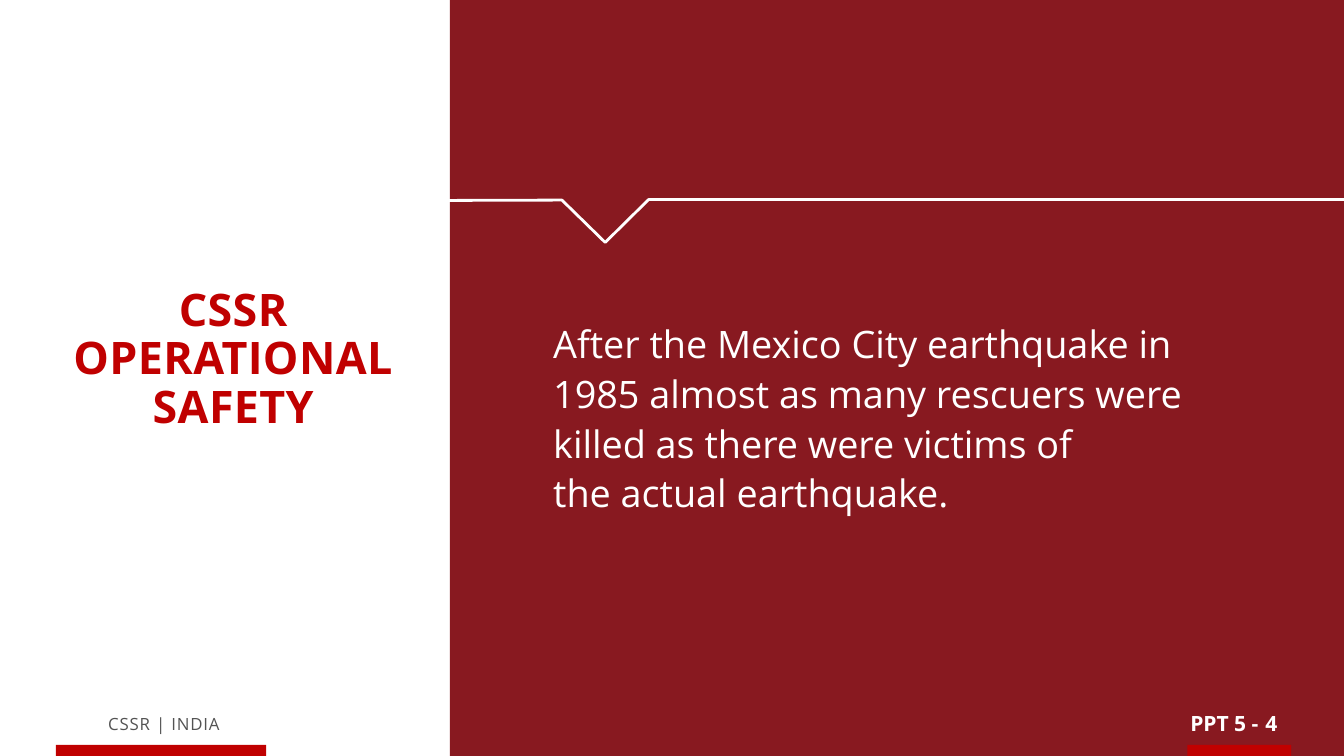
import dataclasses
import typing

import pptx
import pptx.dml.color
import pptx.enum.shapes
import pptx.enum.text
import pptx.util

RGB = pptx.dml.color.RGBColor
ALIGN = pptx.enum.text.PP_ALIGN


@dataclasses.dataclass(frozen=True)
class Theme:
    font: str = "Open Sans"
    panel: RGB = RGB(0x88, 0x19, 0x20)
    accent: RGB = RGB(0xC0, 0x00, 0x00)
    white: RGB = RGB(0xFF, 0xFF, 0xFF)
    muted: RGB = RGB(0x53, 0x53, 0x53)
    title_size: int = 64
    body_size: int = 54
    page_size: int = 30
    footer_size: int = 24
    rule_width: int = 4


class Area(typing.NamedTuple):
    """Shares of the slide, in percent."""
    left: float
    top: float
    width: float
    height: float


@dataclasses.dataclass(frozen=True)
class Style:
    size: int
    color: RGB
    bold: bool = False
    tracking: float = 0
    align: ALIGN = ALIGN.CENTER
    line_spacing: float = 1.0
    inset: float = 0.09
    wrap: bool = True


@dataclasses.dataclass(frozen=True)
class Label:
    area: Area
    paragraphs: tuple[str, ...]
    style: Style


THEME = Theme()
SLIDE_WIDTH = pptx.util.Inches(26.67)
SLIDE_HEIGHT = pptx.util.Inches(15)

BAR_TOP, BAR_HEIGHT = 98.53, 1.47
PAGE_TOP, PAGE_HEIGHT = 93.4, 4.93
MARGIN = 4.16

BLOCKS = (
    (Area(33.48, 0, 66.52, 100), THEME.panel),
    (Area(MARGIN, BAR_TOP, 15.64, BAR_HEIGHT), THEME.accent),
    (Area(88.34, BAR_TOP, 7.72, BAR_HEIGHT), THEME.accent),
)

PAGE_STYLE = Style(THEME.page_size, THEME.white, bold=True, wrap=False)

HEADING = Label(
    Area(MARGIN, 37.47, 26.4, 20.53),
    ("CSSR OPERATIONAL SAFETY",),
    Style(THEME.title_size, THEME.accent, bold=True, tracking=0.6, line_spacing=0.9),
)

LABELS = (
    Label(Area(2.67, 93.87, 19.05, 3.87), ("CSSR | INDIA",),
          Style(THEME.footer_size, THEME.muted, tracking=1.2)),
    Label(Area(87.8, PAGE_TOP, 6.6, PAGE_HEIGHT), ("PPT 5 -",), PAGE_STYLE),
    Label(Area(93.81, PAGE_TOP, 1.57, PAGE_HEIGHT), ("4",), PAGE_STYLE),
    Label(
        Area(40.94, 41.4, 52.34, 30.2),
        ("After the Mexico City earthquake in 1985 almost as many rescuers were "
         "killed as there were victims of",
         "the actual earthquake."),
        Style(THEME.body_size, THEME.white, align=ALIGN.LEFT, line_spacing=1.1, inset=0.06),
    ),
)

NOTCHED_RULE = ((30.93, 26.53), (41.81, 26.47), (45.03, 32.07), (48.26, 26.4), (100, 26.4))


def across(share: float) -> int:
    return round(SLIDE_WIDTH * share / 100)


def down(share: float) -> int:
    return round(SLIDE_HEIGHT * share / 100)


def place(area: Area) -> tuple[int, int, int, int]:
    return across(area.left), down(area.top), across(area.width), down(area.height)


def draw_block(slide: pptx.slide.Slide, area: Area, color: RGB) -> None:
    block = slide.shapes.add_shape(pptx.enum.shapes.MSO_SHAPE.RECTANGLE, *place(area))
    block.shadow.inherit = False
    block.fill.solid()
    block.fill.fore_color.rgb = color
    block.line.fill.background()


def write(frame: pptx.text.text.TextFrame, label: Label) -> None:
    style = label.style
    frame.word_wrap = style.wrap
    frame.auto_size = pptx.enum.text.MSO_AUTO_SIZE.SHAPE_TO_FIT_TEXT
    frame.vertical_anchor = pptx.enum.text.MSO_ANCHOR.TOP
    inset = pptx.util.Inches(style.inset)
    frame.margin_left = frame.margin_right = inset
    frame.margin_top = frame.margin_bottom = inset
    for index, wording in enumerate(label.paragraphs):
        paragraph = frame.add_paragraph() if index else frame.paragraphs[0]
        paragraph.alignment = style.align
        paragraph.line_spacing = style.line_spacing
        paragraph.space_before = pptx.util.Pt(0)
        run = paragraph.add_run()
        run.text = wording
        run.font.name = THEME.font
        run.font.size = pptx.util.Pt(style.size)
        run.font.bold = style.bold
        run.font.color.rgb = style.color
        if style.tracking:
            run.font._element.set("spc", str(round(style.tracking * 100)))


def draw_heading(slide: pptx.slide.Slide, label: Label) -> None:
    heading = slide.shapes.title
    heading.left, heading.top, heading.width, heading.height = place(label.area)
    write(heading.text_frame, label)


def draw_label(slide: pptx.slide.Slide, label: Label) -> None:
    write(slide.shapes.add_textbox(*place(label.area)).text_frame, label)


def draw_rule(slide: pptx.slide.Slide, corners: tuple[tuple[float, float], ...]) -> None:
    start, *rest = [(across(x), down(y)) for x, y in corners]
    builder = slide.shapes.build_freeform(*start)
    builder.add_line_segments(rest, close=False)
    rule = builder.convert_to_shape()
    rule.shadow.inherit = False
    rule.fill.background()
    rule.line.color.rgb = THEME.white
    rule.line.width = pptx.util.Pt(THEME.rule_width)


def main() -> None:
    deck = pptx.Presentation()
    deck.slide_width = SLIDE_WIDTH
    deck.slide_height = SLIDE_HEIGHT
    slide = deck.slides.add_slide(deck.slide_layouts.get_by_name("Title Only"))
    for area, color in BLOCKS:
        draw_block(slide, area, color)
    draw_heading(slide, HEADING)
    for label in LABELS:
        draw_label(slide, label)
    draw_rule(slide, NOTCHED_RULE)
    deck.save("out.pptx")


if __name__ == "__main__":
    main()
